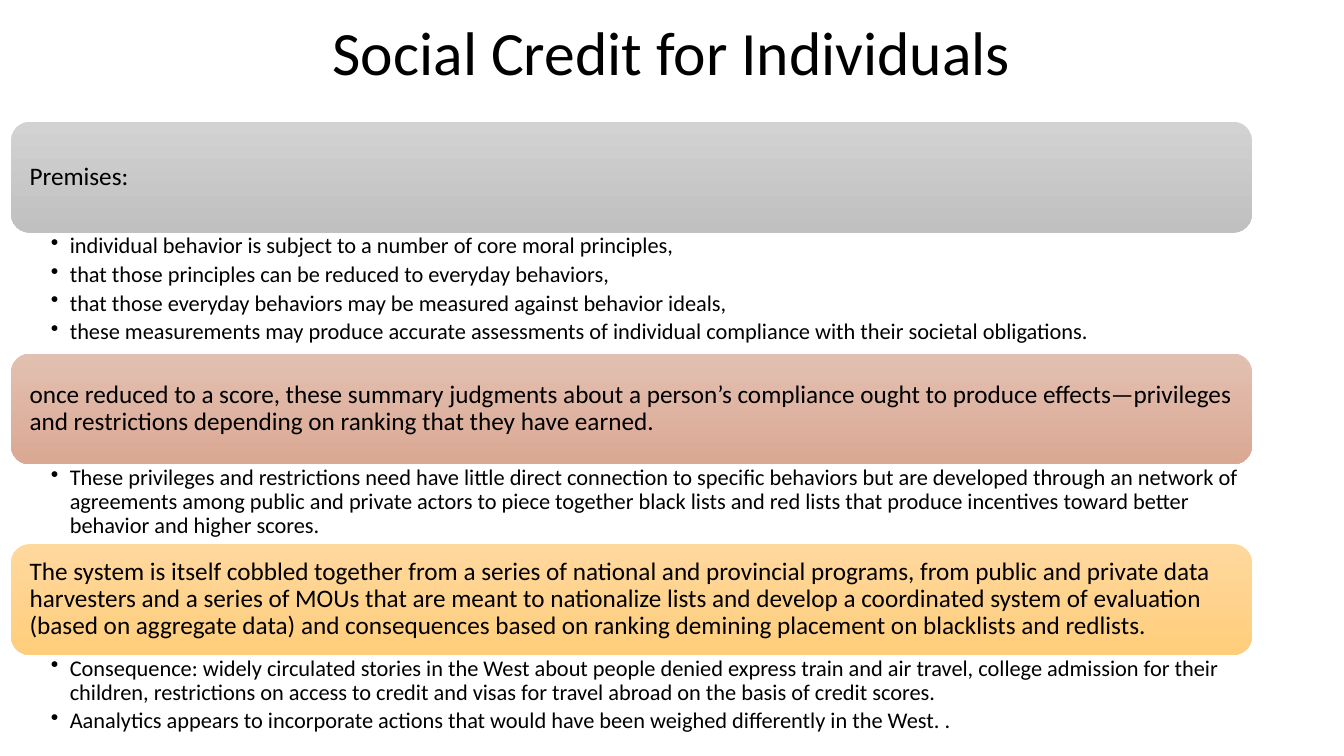
from lxml.etree import SubElement
from pptx import Presentation
from pptx.dml.color import RGBColor
from pptx.enum.shapes import MSO_SHAPE
from pptx.enum.text import MSO_ANCHOR, PP_ALIGN
from pptx.oxml.ns import qn
from pptx.util import Cm, Pt

TITLE = "Social Credit for Individuals"
# heading, gradient from top to bottom, height of the list in cm, list
SECTIONS = [
    ("Premises:", ("D2D2D2", "C0C0C0"), 3.05, [
        "individual behavior is subject to a number of core moral principles,",
        "that those principles can be reduced to everyday behaviors,",
        "that those everyday behaviors may be measured against behavior ideals,",
        "these measurements may produce accurate assessments of individual "
        "compliance with their societal obligations.",
    ]),
    ("once reduced to a score, these summary judgments about a person’s compliance "
     "ought to produce effects—privileges and restrictions depending on ranking "
     "that they have earned.", ("E2C0B1", "DBA893"), 2.01, [
        "These privileges and restrictions need have little direct connection to "
        "specific behaviors but are developed through an network of agreements among "
        "public and private actors to piece together black lists and red lists that "
        "produce incentives toward better behavior and higher scores.",
     ]),
    ("The system is itself cobbled together from a series of national and provincial "
     "programs, from public and private data harvesters and a series of MOUs that are "
     "meant to nationalize lists and develop a coordinated system of evaluation (based "
     "on aggregate data) and consequences based on ranking demining placement on "
     "blacklists and redlists.", ("FFD89E", "FFCE7C"), 2.13, [
        "Consequence: widely circulated stories in the West about people denied express "
        "train and air travel, college admission for their children, restrictions on "
        "access to credit and visas for travel abroad on the basis of credit scores.",
        "Aanalytics appears to incorporate actions that would have been weighed "
        "differently in the West. .",
     ]),
]
LEFT, TOP, WIDTH, BAR_HEIGHT = 0.28, 3.07, 31.27, 2.79
BULLET_INDENT = Cm(0.48)


def color(value):
    return RGBColor.from_string(value)


def format_paragraph(paragraph, size, align=PP_ALIGN.LEFT):
    paragraph.alignment = align
    paragraph.line_spacing = 0.9
    paragraph.font.name = "Calibri"
    paragraph.font.size = Pt(size)
    paragraph.font.color.rgb = color("000000")


def set_insets(frame, left, right, vertical):
    frame.word_wrap = True
    frame.margin_left, frame.margin_right = Cm(left), Cm(right)
    frame.margin_top = frame.margin_bottom = Cm(vertical)


def add_bar(slide, top, heading, gradient):
    bar = slide.shapes.add_shape(MSO_SHAPE.ROUNDED_RECTANGLE, Cm(LEFT), Cm(top),
                                 Cm(WIDTH), Cm(BAR_HEIGHT))
    bar.shadow.inherit = False
    bar.line.fill.background()
    bar.fill.gradient()
    bar.fill.gradient_angle = 270
    for stop, value in zip(bar.fill.gradient_stops, gradient):
        stop.color.rgb = color(value)
    frame = bar.text_frame
    set_insets(frame, 0.33, 0.3, 0.3)
    frame.vertical_anchor = MSO_ANCHOR.MIDDLE
    frame.text = heading
    format_paragraph(frame.paragraphs[0], 18)


def add_list(slide, top, height, items):
    box = slide.shapes.add_textbox(Cm(LEFT), Cm(top), Cm(WIDTH), Cm(height))
    frame = box.text_frame
    set_insets(frame, 1, 0.3, 0.05)
    frame.text = "\n".join(items)
    for paragraph in frame.paragraphs:
        properties = paragraph._p.get_or_add_pPr()
        properties.set("marL", str(BULLET_INDENT))
        properties.set("indent", str(-BULLET_INDENT))
        SubElement(properties, qn("a:buChar"), char="•")
        paragraph.level = 1
        paragraph.space_after = Pt(3.2)
        format_paragraph(paragraph, 16)


def main():
    presentation = Presentation()
    presentation.slide_width, presentation.slide_height = Cm(33.87), Cm(19.05)
    slide = presentation.slides.add_slide(presentation.slide_layouts[5])

    title = slide.shapes.title
    title.left, title.top, title.width, title.height = Cm(2.33), Cm(0.08), Cm(29.21), Cm(2.64)
    title.text_frame.text = TITLE
    title.text_frame.vertical_anchor = MSO_ANCHOR.MIDDLE
    format_paragraph(title.text_frame.paragraphs[0], 44, PP_ALIGN.CENTER)

    top = TOP
    for heading, gradient, list_height, items in SECTIONS:
        add_bar(slide, top, heading, gradient)
        add_list(slide, top + BAR_HEIGHT, list_height, items)
        top += BAR_HEIGHT + list_height

    presentation.save("out.pptx")


if __name__ == "__main__":
    main()
